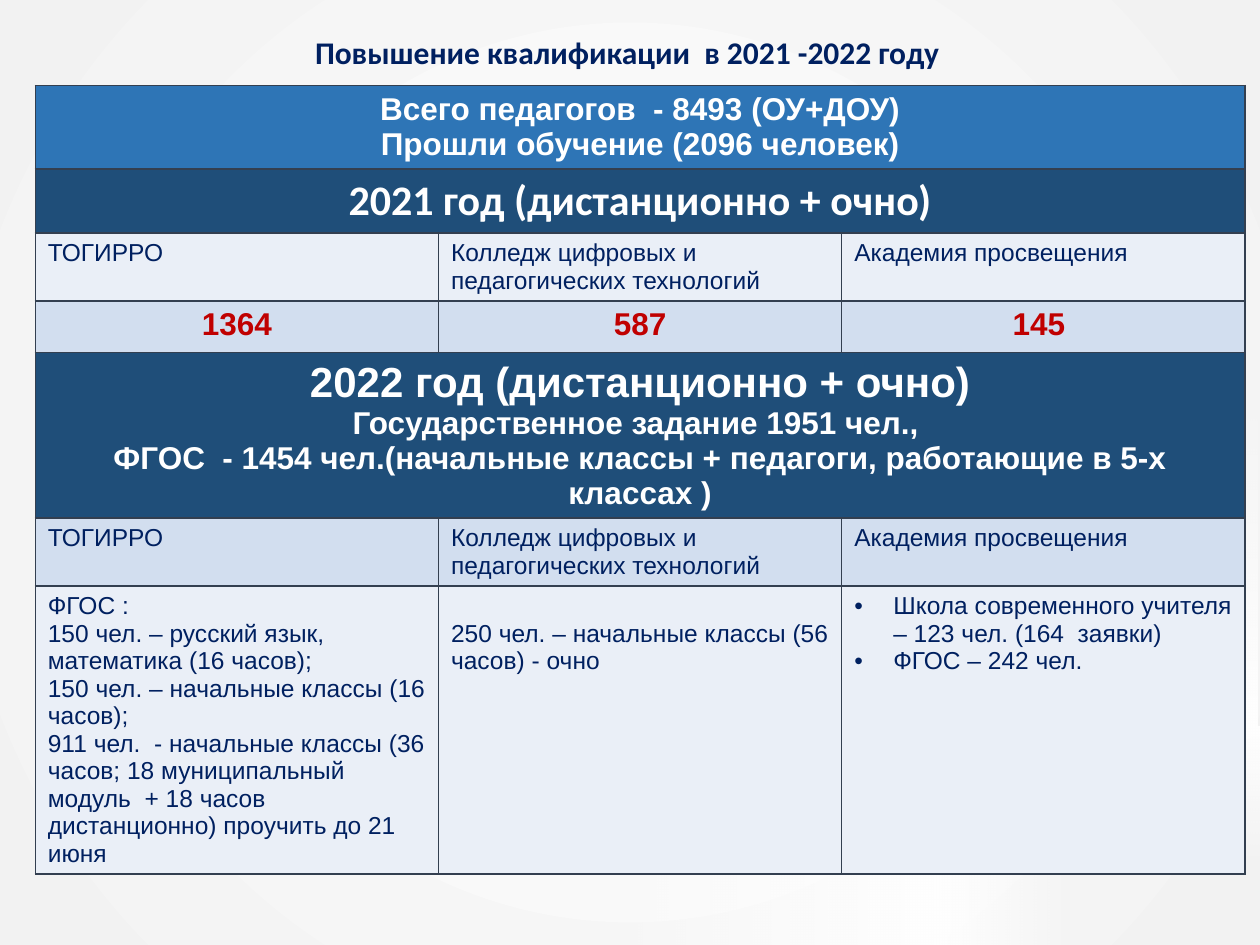
"""Build a slide with a table of teacher training results for 2021 and 2022."""
from lxml import etree
from pptx import Presentation
from pptx.dml.color import RGBColor
from pptx.enum.shapes import MSO_SHAPE
from pptx.enum.text import MSO_ANCHOR, MSO_AUTO_SIZE, PP_ALIGN
from pptx.oxml import parse_xml
from pptx.oxml.ns import nsdecls, qn
from pptx.util import Inches, Pt

LEFT, CENTER = PP_ALIGN.LEFT, PP_ALIGN.CENTER
TOP = MSO_ANCHOR.TOP
NO_AUTOFIT = MSO_AUTO_SIZE.NONE
RECTANGLE = MSO_SHAPE.RECTANGLE
NAVY, RED, WHITE = "002060", "C00000", "FFFFFF"
BLUE, DARK_BLUE, PALE, LIGHT = "2E75B6", "1F4E79", "EAEFF7", "D2DEEF"
BORDER = "333F50"


def color(value):
    """Turn a hex string into a colour."""
    return RGBColor.from_string(value)


def write(paragraph, text, size=14, font="Arial", fill=NAVY, bold=False, align=LEFT, bullet=False):
    """Put formatted text into a paragraph."""
    if bullet:
        properties = paragraph._p.get_or_add_pPr()
        properties.set("marL", str(Inches(0.31)))
        properties.set("indent", str(-Inches(0.31)))
        etree.SubElement(properties, qn("a:buFont")).set("typeface", "Arial")
        etree.SubElement(properties, qn("a:buChar")).set("char", "•")
    paragraph.alignment = align
    run = paragraph.add_run()
    run.text = text
    run.font.size = Pt(size)
    run.font.name = font
    run.font.bold = bold
    run.font.color.rgb = color(fill)


presentation = Presentation()
presentation.slide_width, presentation.slide_height = Inches(10), Inches(7.5)
slide = presentation.slides.add_slide(presentation.slide_layouts[5])

title = slide.shapes.title
title.left, title.top, title.width, title.height = map(Inches, (2.4, 0.21, 5.26, 0.4))
title.text_frame.word_wrap = False
title.text_frame.auto_size = NO_AUTOFIT
title.text_frame.vertical_anchor = TOP
write(title.text_frame.paragraphs[0], "Повышение квалификации  в 2021 -2022 году",
      size=18, font="Calibri", bold=True)

circle = '<a:path path="circle"><a:fillToRect l="50000" t="50000" r="50000" b="50000"/></a:path>'
downward = '<a:lin ang="5400000" scaled="0"/>'
gray = '<a:srgbClr val="F2F2F2"/>'
clear = '<a:srgbClr val="FFFFFF"><a:alpha val="0"/></a:srgbClr>'
panels = [
    (0, 0, 10, 7.5, 0, gray, circle),
    (7.11, 6.09, 1.72, 1.11, 270, clear, downward),
    (7.42, 5.77, 2.58, 1.11, 0, clear, downward),
    (7.4, 3.07, 2.58, 2.71, 180, clear, downward),
    (4.83, 4.85, 2.58, 2.71, 90, clear, downward),
]
for left, top, width, height, rotation, end_color, direction in panels:
    panel = slide.shapes.add_shape(RECTANGLE, Inches(left), Inches(top), Inches(width), Inches(height))
    panel.rotation = rotation
    panel.shadow.inherit = False
    panel.line.fill.background()
    panel.fill.background()
    gradient = parse_xml(
        f'<a:gradFill {nsdecls("a")} rotWithShape="1"><a:gsLst>'
        f'<a:gs pos="0"><a:srgbClr val="FFFFFF"/></a:gs><a:gs pos="100000">{end_color}</a:gs>'
        f'</a:gsLst>{direction}</a:gradFill>')
    panel_properties = panel.element.spPr
    panel_properties.replace(panel_properties.find(qn("a:noFill")), gradient)
    title.element.addprevious(panel.element)

heading = {"size": 18, "fill": WHITE, "bold": True, "align": CENTER}
year = {**heading, "size": 24}
count = {"size": 18, "fill": RED, "bold": True, "align": CENTER}
plain = {}
bulleted = {"bullet": True}
providers = [[(name, plain)] for name in (
    "ТОГИРРО", "Колледж цифровых и педагогических технологий", "Академия просвещения")]
rows = [
    (0.66, BLUE, [[("Всего педагогов  - 8493 (ОУ+ДОУ)", heading),
                   ("Прошли обучение (2096 человек)", heading)]]),
    (0.51, DARK_BLUE, [[("2021 год (дистанционно + очно)", {**year, "font": "Calibri"})]]),
    (0.54, PALE, providers),
    (0.41, LIGHT, [[(number, count)] for number in ("1364", "587", "145 ")]),
    (1.31, DARK_BLUE, [[
        ("2022 год (дистанционно + очно)", year),
        ("Государственное задание 1951 чел., ", heading),
        ("ФГОС  - 1454 чел.(начальные классы + педагоги, работающие в 5-х классах )", heading)]]),
    (0.54, LIGHT, providers),
    (2.28, PALE, [
        [("ФГОС :", plain),
         ("150 чел. – русский язык, математика (16 часов);", plain),
         ("150 чел. – начальные классы (16 часов);", plain),
         ("911 чел.  - начальные классы (36 часов; 18 муниципальный модуль  + 18 часов "
          "дистанционно) проучить до 21 июня", plain)],
        [("250 чел. – начальные классы (56 часов) - очно", plain)],
        [("Школа современного учителя – 123 чел. (164  заявки)", bulleted),
         ("ФГОС – 242 чел.", bulleted)]]),
]
table = slide.shapes.add_table(
    len(rows), 3, Inches(0.28), Inches(0.68), Inches(9.61), Inches(sum(row[0] for row in rows))).table
table.first_row = table.horz_banding = False
for column in table.columns:
    column.width = Inches(3.2)

for row_index, (height, fill, contents) in enumerate(rows):
    table.rows[row_index].height = Inches(height)
    for column_index in range(3):
        cell = table.cell(row_index, column_index)
        cell_properties = cell._tc.get_or_add_tcPr()
        for side in ("lnL", "lnR", "lnT", "lnB"):
            cell_properties.append(parse_xml(
                f'<a:{side} {nsdecls("a")} w="{Pt(1)}"><a:solidFill>'
                f'<a:srgbClr val="{BORDER}"/></a:solidFill></a:{side}>'))
        cell.fill.solid()
        cell.fill.fore_color.rgb = color(fill)
    if len(contents) == 1:
        table.cell(row_index, 0).merge(table.cell(row_index, 2))
    for column_index, lines in enumerate(contents):
        text_frame = table.cell(row_index, column_index).text_frame
        for line_index, (text, style) in enumerate(lines):
            paragraph = text_frame.add_paragraph() if line_index else text_frame.paragraphs[0]
            write(paragraph, text, **style)
table.cell(len(rows) - 1, 1).margin_top = Inches(0.27)

presentation.save("out.pptx")
